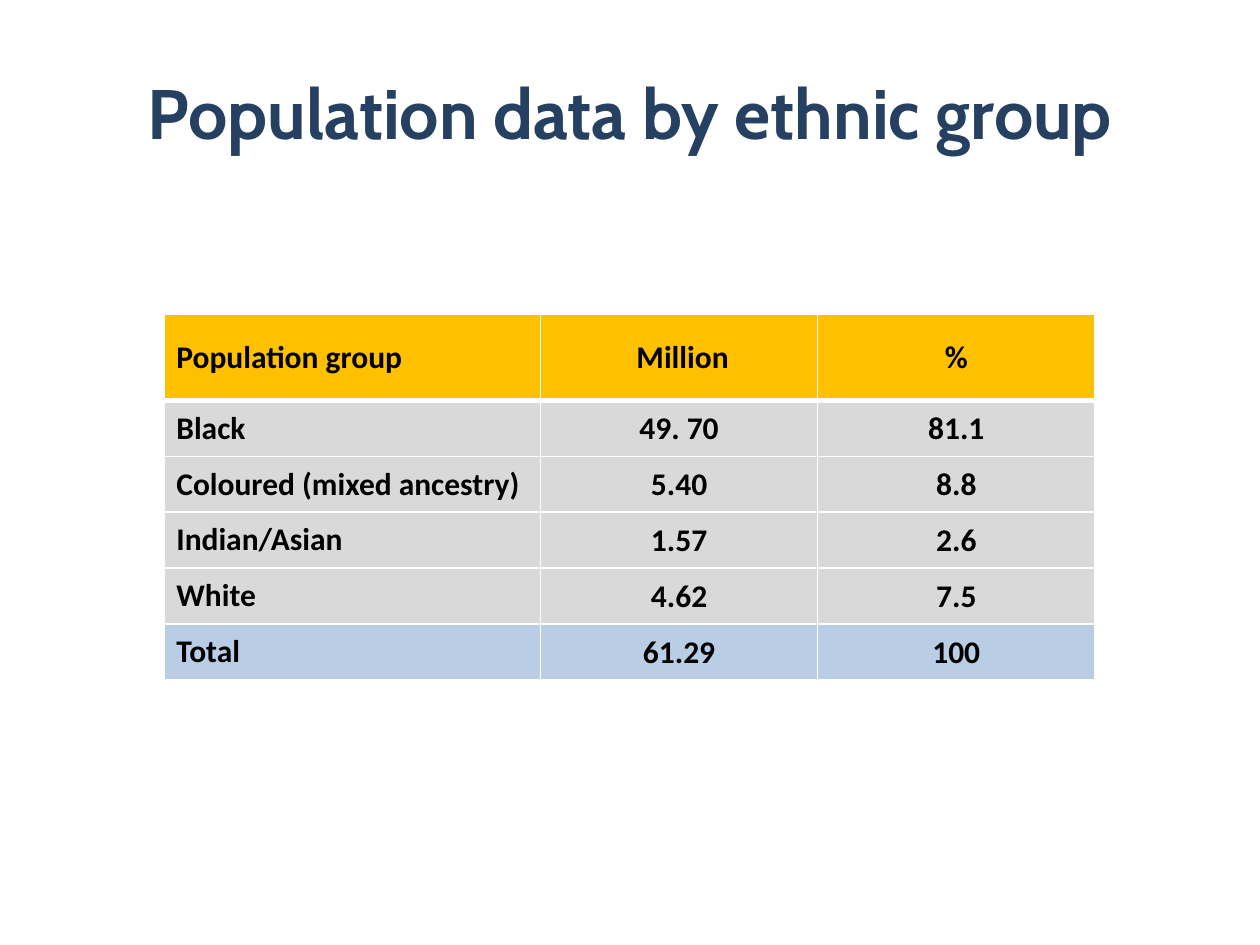
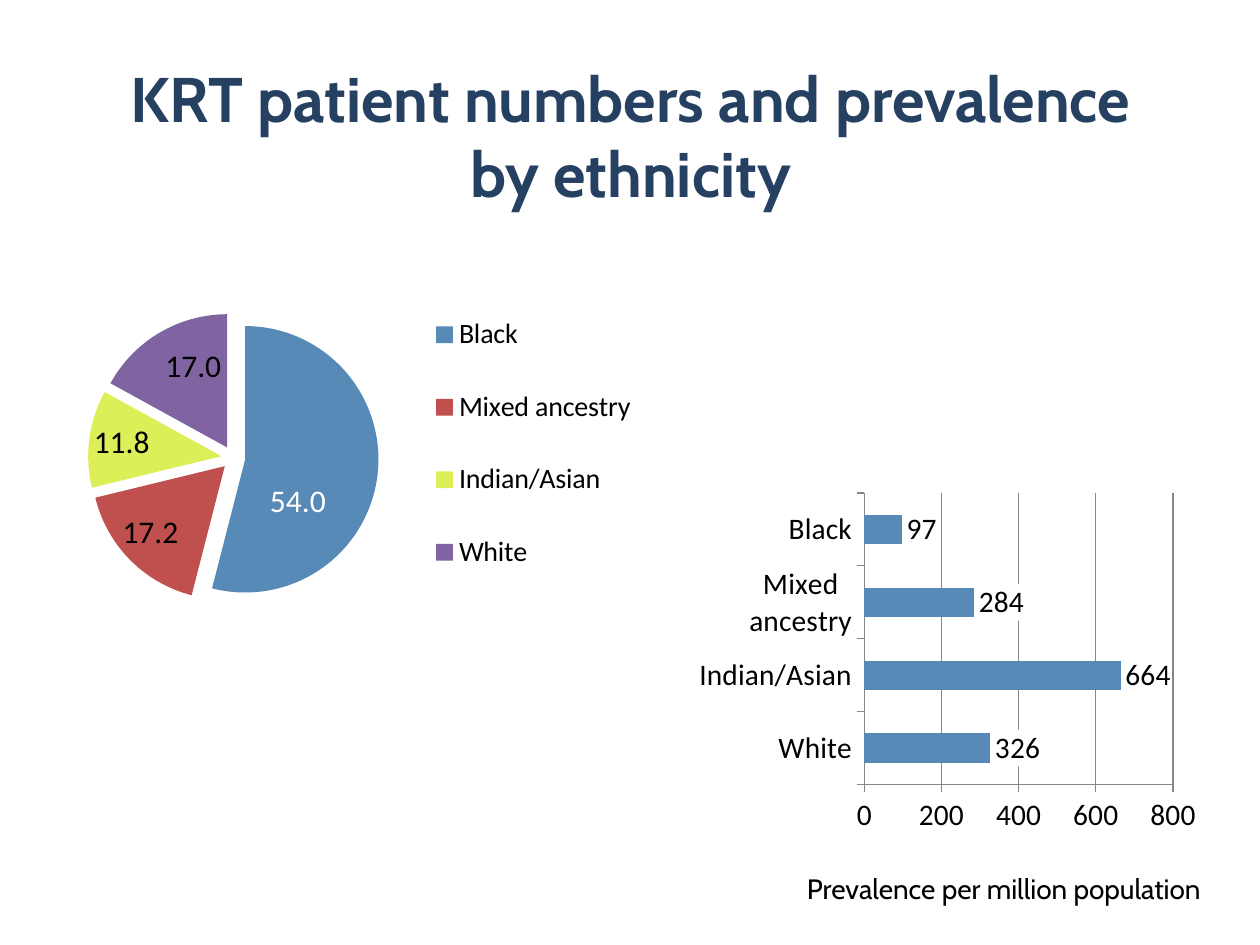
from lxml import etree
from pptx import Presentation
from pptx import util as u
from pptx.chart.data import CategoryChartData
from pptx.dml.color import RGBColor
from pptx.enum import chart as ch
from pptx.enum import text as t
from pptx.oxml.ns import qn

WIDTH, HEIGHT = u.Inches(10), u.Inches(7.5)
TITLE_ONLY = 5

NAVY = RGBColor(0x25, 0x40, 0x61)
BLACK = RGBColor(0, 0, 0)
WHITE = RGBColor(0xFF, 0xFF, 0xFF)
AMBER = RGBColor(0xFF, 0xC0, 0x00)
GREY = RGBColor(0xD9, 0xD9, 0xD9)
PALE_BLUE = RGBColor(0xB9, 0xCD, 0xE5)
AXIS_GREY = RGBColor(0x86, 0x86, 0x86)
BLUE = RGBColor(0x57, 0x8A, 0xB7)
RED = RGBColor(0xC0, 0x50, 0x4D)
LIME = RGBColor(0xDC, 0xEF, 0x59)
PURPLE = RGBColor(0x80, 0x64, 0xA2)

HEADING_FONT, DATA_FONT = "Cabin", "Calibri"

POPULATION = [
    ("Population group", " Million", "%"),
    ("Black", "49. 70", "81.1"),
    ("Coloured (mixed ancestry)", "5.40", "8.8"),
    ("Indian/Asian", "1.57", "2.6"),
    ("White", "4.62", "7.5"),
    ("Total", "61.29", "100"),
]
# group, share of patients, prevalence, slice colour, label colour, label offset
ETHNICITY = [
    ("Black", 54.0, 97, BLUE, WHITE, (-0.02, 0.07)),
    ("Mixed ancestry", 17.2, 284, RED, BLACK, (-0.04, 0.04)),
    ("Indian/Asian", 11.8, 664, LIME, BLACK, (-0.05, -0.01)),
    ("White", 17.0, 326, PURPLE, BLACK, (0, -0.05)),
]


def box(left, top, width, height):
    """Turn shares of the slide's size into lengths."""
    return [int(share * side) for share, side in
            zip((left, top, width, height), (WIDTH, HEIGHT) * 2)]


def style_font(font, name, size, color, bold=False):
    font.color.rgb = color
    for key, value in {"name": name, "size": u.Pt(size), "bold": bold}.items():
        setattr(font, key, value)


def add_titled_slide(deck, wording, place, size):
    slide = deck.slides.add_slide(deck.slide_layouts[TITLE_ONLY])
    title = slide.shapes.title
    title.left, title.top, title.width, title.height = box(*place)
    frame = title.text_frame
    frame.text = wording
    frame.word_wrap = True
    frame.auto_size = t.MSO_AUTO_SIZE.NONE
    frame.vertical_anchor = t.MSO_ANCHOR.MIDDLE
    heading = frame.paragraphs[0]
    heading.alignment = t.PP_ALIGN.CENTER
    style_font(heading.runs[0].font, HEADING_FONT, size, NAVY, True)
    return slide


def sub(parent, tag, **attributes):
    return etree.SubElement(parent, qn(tag), attributes)


def set_borders(cell, widths):
    """Draw white borders; widths are points for left, right, top, bottom."""
    properties = cell._tc.get_or_add_tcPr()
    for position, (side, points) in enumerate(zip("LRTB", widths)):
        line = sub(properties, f"a:ln{side}", w=str(u.Pt(points)))
        sub(sub(line, "a:solidFill"), "a:srgbClr", val=str(WHITE))
        properties.insert(position, line)


def add_population_table(slide, rows, place):
    table = slide.shapes.add_table(len(rows), len(rows[0]), *box(*place)).table
    table.horz_banding = False
    for column, width in zip(table.columns, (2.99, 2.2, 2.2)):
        column.width = u.Inches(width)
    last = len(rows) - 1
    for r, values in enumerate(rows):
        table.rows[r].height = u.Inches(2.22 / last if r else 0.68)
        fill = {0: AMBER, last: PALE_BLUE}.get(r, GREY)
        for c, value in enumerate(values):
            cell = table.cell(r, c)
            cell.fill.solid()
            cell.fill.fore_color.rgb = fill
            cell.vertical_anchor = t.MSO_ANCHOR.MIDDLE
            if r and c:
                for side in ("left", "right", "top"):
                    setattr(cell, f"margin_{side}", u.Inches(0.01))
                cell.margin_bottom = 0
            cell.text = value
            entry = cell.text_frame.paragraphs[0]
            entry.alignment = t.PP_ALIGN.CENTER if c else t.PP_ALIGN.LEFT
            style_font(entry.runs[0].font, DATA_FONT, 18, BLACK, True)
            set_borders(cell, (1, 1, 3 if r == 1 else 1, 1 if r else 3))


def set_layout(part, index, place, modes=()):
    """Fix where a chart part sits, in shares of the chart's size."""
    for former in part.findall(qn("c:layout")):
        part.remove(former)
    layout = etree.Element(qn("c:layout"))
    manual = sub(layout, "c:manualLayout")
    for tag, value in modes:
        sub(manual, f"c:{tag}", val=value)
    for tag, share in zip("xywh", place):
        sub(manual, f"c:{tag}", val=str(share))
    part.insert(index, layout)


EDGE_MODES = [("xMode", "edge"), ("yMode", "edge")]
INNER_MODES = [("layoutTarget", "inner")] + EDGE_MODES


def add_plain_chart(slide, kind, groups, values, number_format, place, plot_place):
    data = CategoryChartData(number_format=number_format)
    data.categories = groups
    data.add_series("Series 1", values)
    chart = slide.shapes.add_chart(kind, *box(*place), data).chart
    chart.has_title = False
    chart.has_legend = False
    style_font(chart.font, DATA_FONT, 18, BLACK)
    plot = chart.plots[0]
    plot.has_data_labels = True
    for key, value in {"show_value": True, "number_format": number_format,
                       "number_format_is_linked": False}.items():
        setattr(plot.data_labels, key, value)
    set_layout(next(chart.element.iter(qn("c:plotArea"))), 0, plot_place, INNER_MODES)
    return chart


def add_share_pie(slide, place):
    groups, shares, _, colors, label_colors, offsets = zip(*ETHNICITY)
    chart = add_plain_chart(slide, ch.XL_CHART_TYPE.PIE, groups, shares, "0.0",
                            place, (0.11, 0.21, 0.45, 0.61))
    chart.plots[0].vary_by_categories = True
    points = chart.plots[0].series[0].points
    for i, (color, label_color) in enumerate(zip(colors, label_colors)):
        points[i].format.fill.solid()
        points[i].format.fill.fore_color.rgb = color
        label = points[i].data_label
        style_font(label.font, DATA_FONT, 18, label_color)
        label.position = ch.XL_LABEL_POSITION.CENTER
    for label, offset in zip(chart.element.iter(qn("c:dLbl")), offsets):
        set_layout(label, 1, offset)
    explosion = etree.Element(qn("c:explosion"), val="9")
    next(chart.element.iter(qn("c:dPt"))).addprevious(explosion)

    chart.has_legend = True
    chart.legend.position = ch.XL_LEGEND_POSITION.RIGHT
    chart.legend.include_in_layout = False
    style_font(chart.legend.font, DATA_FONT, 16, BLACK)
    set_layout(next(chart.element.iter(qn("c:legend"))), 1,
               (0.6, 0.14, 0.36, 0.69), EDGE_MODES)


def show_every_category(chart):
    """Keep all category labels level and drawn, even where they sit close."""
    axis = next(chart.element.iter(qn("c:catAx")))
    axis.find(qn("c:txPr")).find(qn("a:bodyPr")).set("rot", "0")
    skip = etree.Element(qn("c:tickLblSkip"), val="1")
    axis.find(qn("c:noMultiLvlLbl")).addprevious(skip)


def add_prevalence_bars(slide, place):
    groups, _, prevalence, *_ = zip(*reversed(ETHNICITY))
    chart = add_plain_chart(slide, ch.XL_CHART_TYPE.BAR_CLUSTERED, groups, prevalence,
                            "0", place, (0.33, 0, 0.63, 0.82))
    plot = chart.plots[0]
    plot.gap_width = 150
    plot.vary_by_categories = False
    bars = plot.series[0].format.fill
    bars.solid()
    bars.fore_color.rgb = BLUE
    plot.data_labels.position = ch.XL_LABEL_POSITION.OUTSIDE_END
    style_font(plot.data_labels.font, DATA_FONT, 17, BLACK)
    backing = etree.Element(qn("c:spPr"))
    sub(sub(backing, "a:solidFill"), "a:srgbClr", val=str(WHITE))
    labels = next(chart.element.iter(qn("c:dLbls")))
    labels.find(qn("c:numFmt")).addnext(backing)

    scale = chart.value_axis
    scale.has_major_gridlines = True
    for key, value in {"minimum_scale": 0, "maximum_scale": 800,
                       "major_unit": 200}.items():
        setattr(scale, key, value)
    for axis in (scale, chart.category_axis):
        axis.major_tick_mark = ch.XL_TICK_MARK.OUTSIDE
        axis.format.line.color.rgb = AXIS_GREY
        style_font(axis.tick_labels.font, DATA_FONT, 17, BLACK)
    scale.major_gridlines.format.line.color.rgb = AXIS_GREY
    show_every_category(chart)


def add_caption(slide, wording, place):
    frame = slide.shapes.add_textbox(*box(*place)).text_frame
    frame.word_wrap = True
    frame.auto_size = t.MSO_AUTO_SIZE.SHAPE_TO_FIT_TEXT
    frame.text = wording
    caption = frame.paragraphs[0]
    caption.alignment = t.PP_ALIGN.RIGHT
    style_font(caption.runs[0].font, HEADING_FONT, 16, BLACK)


def main():
    deck = Presentation()
    deck.slide_width, deck.slide_height = WIDTH, HEIGHT

    population = add_titled_slide(deck, "Population data by ethnic group",
                                  (0.012, 0.05, 0.976, 0.136), 40)
    add_population_table(population, POPULATION, (0.13, 0.333, 0.74, 0.388))

    patients = add_titled_slide(deck, "KRT patient numbers and prevalence by ethnicity",
                                (0.083, 0.059, 0.835, 0.167), 36)
    add_prevalence_bars(patients, (0.555, 0.521, 0.394, 0.377))
    add_caption(patients, "Prevalence per million population",
                (0.61, 0.916, 0.353, 0.049))
    add_share_pie(patients, (0.006, 0.225, 0.535, 0.504))

    deck.save("out.pptx")


if __name__ == "__main__":
    main()
